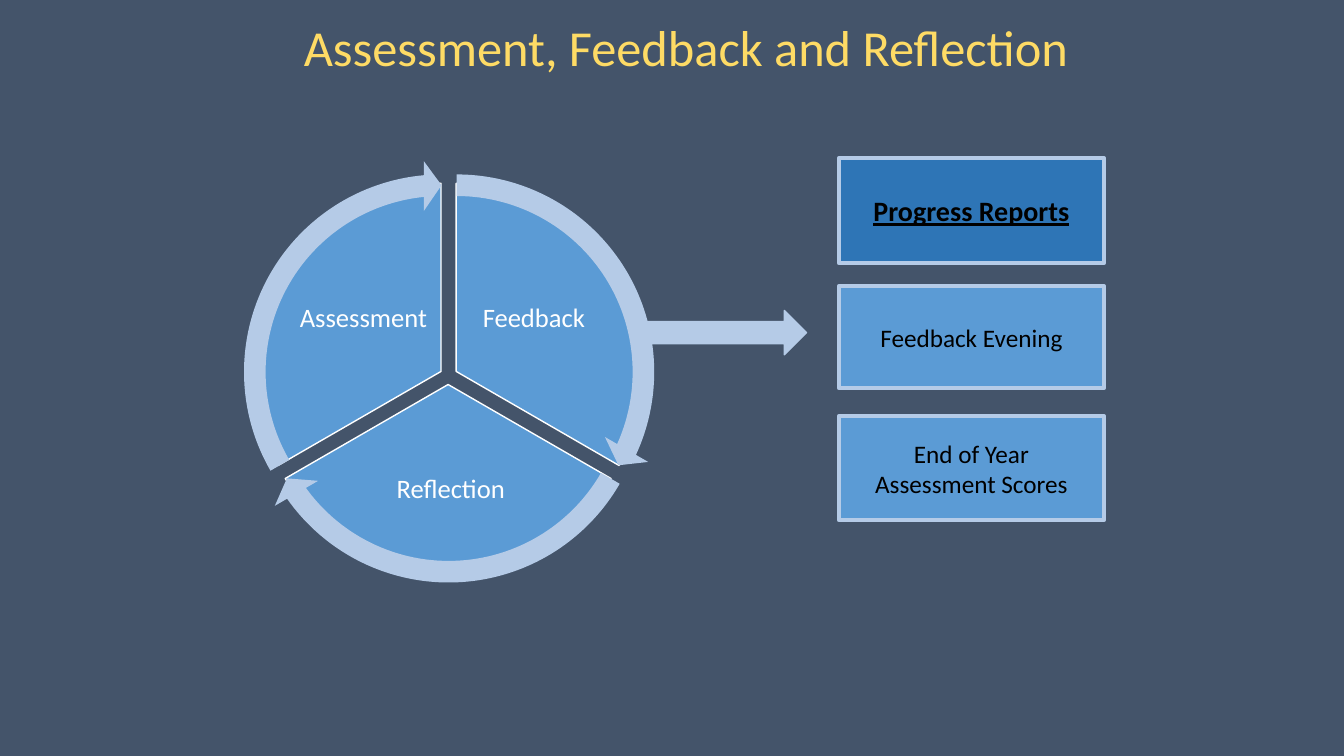
from pptx import Presentation
from pptx.dml.color import RGBColor
from pptx.enum.shapes import MSO_SHAPE
from pptx.enum.text import MSO_ANCHOR, PP_ALIGN
from pptx.util import Inches, Pt

PIE = MSO_SHAPE.PIE
CIRCULAR_ARROW = MSO_SHAPE.CIRCULAR_ARROW
RIGHT_ARROW = MSO_SHAPE.RIGHT_ARROW
RECTANGLE = MSO_SHAPE.RECTANGLE
CENTER = PP_ALIGN.CENTER
MIDDLE, TOP = MSO_ANCHOR.MIDDLE, MSO_ANCHOR.TOP

FONT = "Calibri"
BACKGROUND = "44546A"
BLUE = "5B9BD5"
DARK_BLUE = "2E75B6"
PALE_BLUE = "B5CBE7"
WHITE = "FFFFFF"
BLACK = "000000"
YELLOW = "FEDB65"

# Angles are in the adjustment unit of the preset shapes: 0.6 per degree
THIRD_TURN = 72
FULL_TURN = 216
ARROWHEAD_ANGLE = 3.275
PIE_SIZE = 3.73
ARROW_MARGIN = 0.23
ARROW_SIZE = 4.2

# Label, label box, left and top of the pie, start angle
CYCLE_STEPS = [
    ("Feedback", (4.63, 2.61, 1.33, 1.11), 2.66, 1.82, 162),
    ("Reflection", (3.47, 4.37, 2, 0.98), 2.58, 1.95, 18),
    ("Assessment", (2.94, 2.61, 1.33, 1.11), 2.51, 1.82, 90),
]
# Text, top, height, fill, font size, whether emphasised
OUTCOMES = [
    ("Progress Reports", 1.57, 1.04, DARK_BLUE, 20, True),
    ("Feedback Evening", 2.84, 1.01, BLUE, 18, False),
    ("End of Year\nAssessment Scores", 4.13, 1.03, BLUE, 18, False),
]


def color(value):
    return RGBColor.from_string(value)


def add_shape(slide, kind, box, fill, line=None, line_width=1):
    shape = slide.shapes.add_shape(kind, *map(Inches, box))
    shape.shadow.inherit = False
    shape.fill.solid()
    shape.fill.fore_color.rgb = color(fill)
    if line:
        shape.line.color.rgb = color(line)
        shape.line.width = Pt(line_width)
    else:
        shape.line.fill.background()
    return shape


def write_text(shape, text, size, font_color, anchor=MIDDLE, emphasised=False):
    text_frame = shape.text_frame
    text_frame.word_wrap = True
    text_frame.vertical_anchor = anchor
    text_frame.text = text
    for paragraph in text_frame.paragraphs:
        paragraph.alignment = CENTER
        for run in paragraph.runs:
            run.font.name = FONT
            run.font.size = Pt(size)
            run.font.color.rgb = color(font_color)
            if emphasised:
                run.font.bold = run.font.underline = True


def add_text_box(slide, box, *text_style):
    text_box = slide.shapes.add_textbox(*map(Inches, box))
    write_text(text_box, *text_style)
    return text_box


def add_cycle_step(slide, label, label_box, left, top, start):
    end = (start + THIRD_TURN) % FULL_TURN
    pie = add_shape(slide, PIE, (left, top, PIE_SIZE, PIE_SIZE), BLUE, WHITE)
    pie.adjustments[0] = start
    pie.adjustments[1] = end
    text_box = add_text_box(slide, label_box, label, 19, WHITE)
    text_frame = text_box.text_frame
    text_frame.margin_left = text_frame.margin_right = Inches(0.03)
    text_frame.margin_top = text_frame.margin_bottom = Inches(0.03)
    text_frame.paragraphs[0].line_spacing = 0.9


def add_cycle_arrow(slide, left, top, start):
    """Draw the curved arrow around the outside of one pie step."""
    end = (start + THIRD_TURN) % FULL_TURN
    box = (left - ARROW_MARGIN, top - ARROW_MARGIN, ARROW_SIZE, ARROW_SIZE)
    arrow = add_shape(slide, CIRCULAR_ARROW, box, PALE_BLUE)
    values = (0.051, ARROWHEAD_ANGLE, end - ARROWHEAD_ANGLE, start, 0.059)
    for index, value in enumerate(values):
        arrow.adjustments[index] = value


def add_outcome(slide, text, top, height, fill, size, emphasised):
    box = (8.32, top, 2.63, height)
    shape = add_shape(slide, RECTANGLE, box, fill, PALE_BLUE, 3)
    write_text(shape, text, size, BLACK, MIDDLE, emphasised)


def main():
    presentation = Presentation()
    presentation.slide_width = Inches(13.33)
    presentation.slide_height = Inches(7.5)
    slide = presentation.slides.add_slide(presentation.slide_layouts[6])
    slide.background.fill.solid()
    slide.background.fill.fore_color.rgb = color(BACKGROUND)

    for step in CYCLE_STEPS:
        add_cycle_step(slide, *step)
    for _, _, left, top, start in CYCLE_STEPS:
        add_cycle_arrow(slide, left, top, start)
    add_shape(slide, RIGHT_ARROW, (6.27, 3.08, 1.73, 0.44), PALE_BLUE, PALE_BLUE)
    for outcome in OUTCOMES:
        add_outcome(slide, *outcome)
    add_text_box(slide, (2.67, 0.11, 8.27, 0.71),
                 "Assessment, Feedback and Reflection", 36, YELLOW, TOP)

    presentation.save("out.pptx")


if __name__ == "__main__":
    main()
